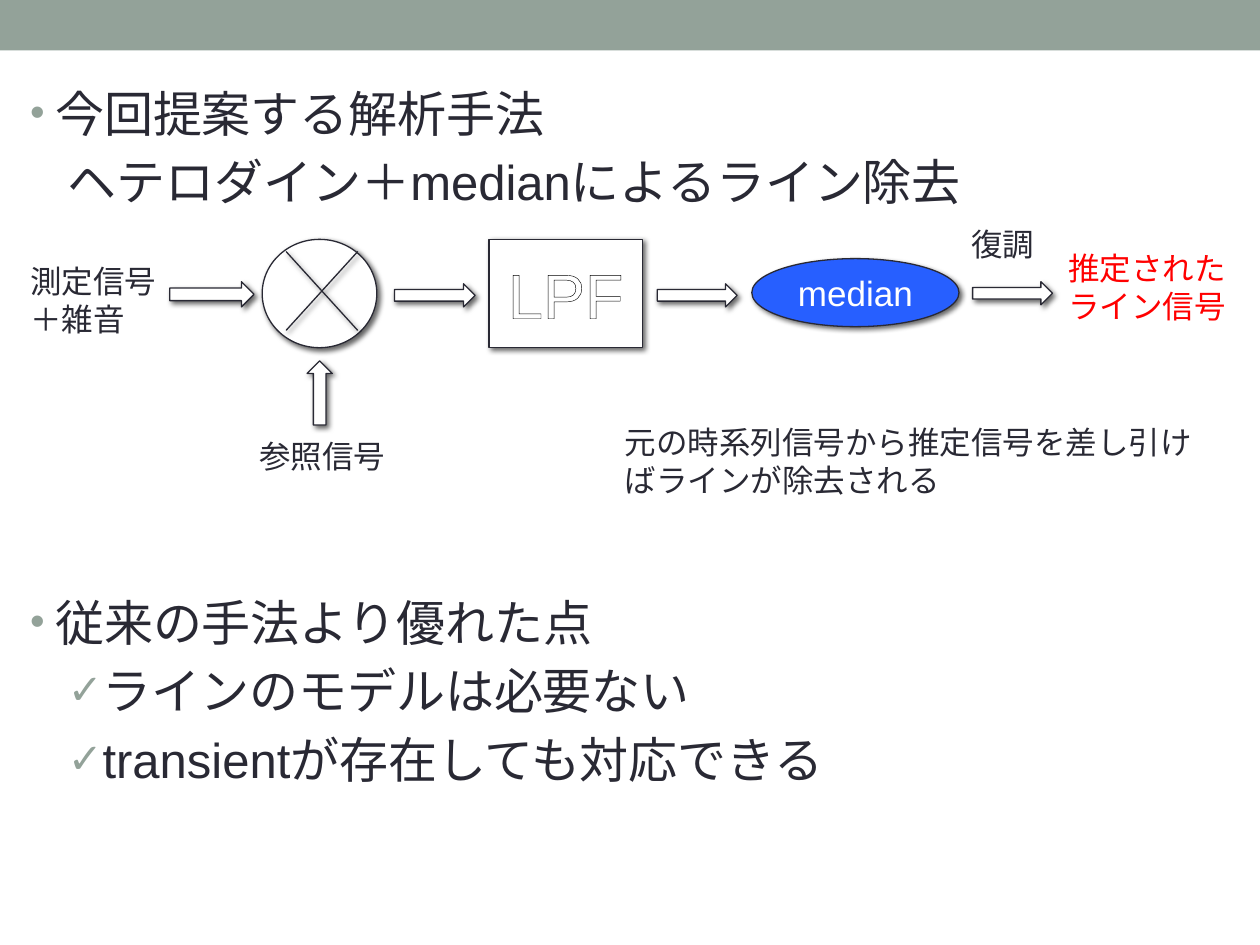
"""Build the slide on line removal with heterodyne and median filtering."""
from lxml.etree import SubElement
from pptx import Presentation
from pptx.dml.color import RGBColor
from pptx.enum.lang import MSO_LANGUAGE_ID as LANG
from pptx.enum.shapes import MSO_SHAPE as SHAPE
from pptx.enum.text import MSO_ANCHOR as ANCHOR, PP_ALIGN as ALIGN
from pptx.oxml.ns import qn
from pptx.util import Pt

INK, SAGE, WHITE, BLUE, RED = "292934", "93A299", "FFFFFF", "275FFF", "FF0000"


def rgb(value):
    return RGBColor.from_string(value)


def write(paragraph, text, size, color):
    run = paragraph.add_run()
    run.text = text
    run.font.name, run.font.size = "Arial", Pt(size)
    run.font.color.rgb = rgb(color)
    run.font.language_id = LANG.JAPANESE
    return run


deck = Presentation()
deck.slide_width, deck.slide_height = Pt(720), Pt(540)
slide = deck.slides.add_slide(deck.slide_layouts[6])
shapes = slide.shapes

band = shapes.add_shape(SHAPE.RECTANGLE, Pt(0), Pt(0), Pt(720), Pt(28.8))
band.shadow.inherit = False
band.fill.solid()
band.fill.fore_color.rgb = rgb(SAGE)
band.line.fill.background()

outline = [
    ("今回提案する解析手法", 0, 14.4, -14.4, "•", 5.6),
    ("ヘテロダイン＋medianによるライン除去", 1, 21.6, 0, None, 5.6),
    ("従来の手法より優れた点", 0, 14.4, -14.4, "•", 218),
    ("ラインのモデルは必要ない", 1, 36, -14.4, "✓", 5.6),
    ("transientが存在しても対応できる", 1, 36, -14.4, "✓", 5.6),
]
body = shapes.add_textbox(Pt(10.1), Pt(43.9), Pt(696.2), Pt(465.8)).text_frame
body.word_wrap = True
for index, (text, level, margin, indent, bullet, gap) in enumerate(outline):
    point = body.add_paragraph() if index else body.paragraphs[0]
    point.level, point.space_before = level, Pt(gap)
    write(point, text, 28, INK)
    props = point._p.get_or_add_pPr()
    props.set("marL", str(Pt(margin)))
    props.set("indent", str(Pt(indent)))
    if bullet:
        bullet_color = SubElement(props, qn("a:buClr"))
        SubElement(bullet_color, qn("a:srgbClr"), val=SAGE)
        SubElement(props, qn("a:buSzPct"), val="85000")
        SubElement(props, qn("a:buFont"), typeface="Arial")
        SubElement(props, qn("a:buChar"), char=bullet)

stages = [
    (SHAPE.OVAL, 149.8, 136.8, 65.5, 61.9, WHITE, None, 0),
    (SHAPE.MATH_MULTIPLY, 144.7, 123.1, 78.5, 86.4, SAGE, None, 0),
    (SHAPE.RECTANGLE, 279.4, 136.8, 87.8, 61.9, WHITE, "LPF", 36),
    (SHAPE.RIGHT_ARROW, 225.4, 162.2, 46.1, 13.2, WHITE, None, 0),
    (SHAPE.RIGHT_ARROW, 97, 161, 48.2, 14.4, WHITE, None, 0),
    (SHAPE.UP_ARROW, 175.5, 206.2, 14.4, 36.7, WHITE, None, 0),
    (SHAPE.RIGHT_ARROW, 375.6, 162.2, 45.6, 13.2, WHITE, None, 0),
    (SHAPE.OVAL, 429.6, 147.8, 118.4, 38.9, BLUE, "median", 20),
    (SHAPE.RIGHT_ARROW, 555.8, 161, 45.6, 13.2, WHITE, None, 0),
]
for kind, left, top, width, height, color, text, size in stages:
    stage = shapes.add_shape(kind, Pt(left), Pt(top), Pt(width), Pt(height))
    stage.fill.solid()
    stage.fill.fore_color.rgb = rgb(color)
    stage.line.color.rgb = rgb(INK)
    stage.line.width = Pt(0.75)
    stage.shadow.inherit = False
    effects = stage._element.spPr.find(qn("a:effectLst"))
    shadow = SubElement(effects, qn("a:outerShdw"), blurRad=str(Pt(3)),
                        dist=str(Pt(2)), dir="2700000", rotWithShape="0")
    shade = SubElement(shadow, qn("a:srgbClr"), val="000000")
    SubElement(shade, qn("a:alpha"), val="60000")
    if kind == SHAPE.MATH_MULTIPLY:
        stage.adjustments[0] = 0
    if text:
        stage.text_frame.vertical_anchor = ANCHOR.MIDDLE
        caption = stage.text_frame.paragraphs[0]
        caption.alignment = ALIGN.CENTER
        run = write(caption, text, size, WHITE)
        if text == "LPF":
            run_props = run._r.get_or_add_rPr()
            edge = SubElement(run_props, qn("a:ln"), w=str(Pt(0.8)))
            edge_fill = SubElement(edge, qn("a:solidFill"))
            SubElement(edge_fill, qn("a:srgbClr"), val="000000")
            run_props.insert(0, edge)

labels = [
    (["測定信号", "＋雑音"], 10.1, 146.2, 125.3, 51.1, INK),
    (["参照信号"], 141.1, 246.2, 121.7, 28.8, INK),
    (["復調"], 547.9, 125.3, 108, 29.5, INK),
    (["推定されたライン信号"], 603.2, 139, 105.3, 51.1, RED),
    (["元の時系列信号から推定信号を差し引けばラインが除去される"],
     349.9, 238.3, 345.6, 51.1, INK),
]
for lines, left, top, width, height, color in labels:
    label = shapes.add_textbox(Pt(left), Pt(top), Pt(width), Pt(height)).text_frame
    label.word_wrap = True
    for index, text in enumerate(lines):
        line = label.add_paragraph() if index else label.paragraphs[0]
        write(line, text, 18, color)

deck.save("out.pptx")
